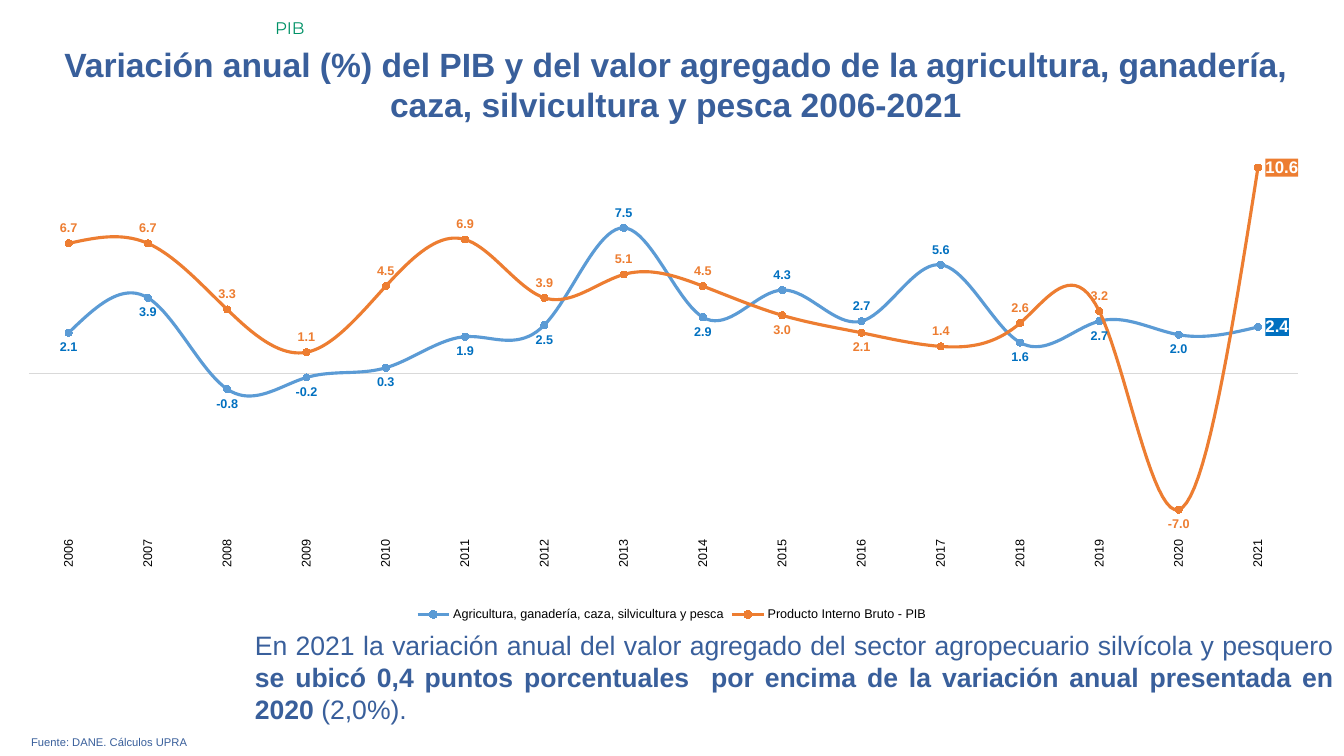
from lxml import etree
from pptx import Presentation
from pptx.chart.data import CategoryChartData
from pptx.dml.color import RGBColor
from pptx.enum.chart import (XL_CHART_TYPE, XL_LABEL_POSITION, XL_LEGEND_POSITION,
                             XL_MARKER_STYLE, XL_TICK_LABEL_POSITION, XL_TICK_MARK)
from pptx.enum.text import MSO_ANCHOR, PP_ALIGN
from pptx.oxml import parse_xml
from pptx.oxml.ns import nsdecls, qn
from pptx.util import Pt

ABOVE, BELOW, RIGHT = XL_LABEL_POSITION.ABOVE, XL_LABEL_POSITION.BELOW, XL_LABEL_POSITION.RIGHT
LEFT_ALIGN, CENTER, JUSTIFY = PP_ALIGN.LEFT, PP_ALIGN.CENTER, PP_ALIGN.JUSTIFY
COLORS = {"navy": "395F9B", "green": "009267", "blue": "5B9BD5", "deep blue": "0070C0",
          "orange": "ED7D31", "grey": "D9D9D9", "black": "000000", "white": "FFFFFF"}
NUMBER_FORMAT = "#,##0.0"


def set_font(font, size, color, bold=False, name="Arial"):
    values = {"size": Pt(size), "bold": bold, "name": name}
    for key, value in values.items():
        setattr(font, key, value)
    font.color.rgb = RGBColor.from_string(COLORS[color])


def fill_text(box, place, align, size, color, spans, name="Arial"):
    """Place a text shape and write one paragraph of (text, bold) spans."""
    box.left, box.top, box.width, box.height = [Pt(length) for length in place]
    frame = box.text_frame
    frame.word_wrap = True
    frame.vertical_anchor = MSO_ANCHOR.TOP
    para = frame.paragraphs[0]
    para.alignment = align
    for text, bold in spans:
        span = para.add_run()
        span.text = text
        set_font(span.font, size, color, bold, name)


deck = Presentation()
deck.slide_width, deck.slide_height = Pt(960), Pt(540)
page = deck.slides.add_slide(deck.slide_layouts[5])

# Texts
fill_text(page.shapes.title, (32.4, 27.4, 900.7, 65.5), CENTER, 24, "navy", [
    ("Variación anual (%) del PIB y del valor agregado de la agricultura, ganadería, "
     "caza, silvicultura y pesca 2006-2021", True)])

text_boxes = [
    ((15.1, 522, 929.5, 17), JUSTIFY, 8, "navy", [("Fuente: DANE. Cálculos UPRA", False)], "Arial"),
    ((189.4, 9.4, 770.4, 21.6), LEFT_ALIGN, 12, "green", [("PIB", False)], "Montserrat"),
    ((175, 445.7, 784.8, 76.3), JUSTIFY, 19, "navy", [
        ("En 2021 la variación anual del valor agregado del sector agropecuario silvícola "
         "y pesquero ", False),
        ("se ubicó 0,4 puntos porcentuales  por encima de la variación anual presentada "
         "en 2020 ", True),
        ("(2,0%).", False)], "Arial"),
]
for place, align, size, color, spans, name in text_boxes:
    box = page.shapes.add_textbox(0, 0, 0, 0)
    fill_text(box, place, align, size, color, spans, name)

# Chart
data = CategoryChartData(number_format=NUMBER_FORMAT)
data.categories = [str(year) for year in range(2006, 2022)]
data.add_series("Agricultura, ganadería, caza, silvicultura y pesca",
                [2.1, 3.9, -0.8, -0.2, 0.3, 1.9, 2.5, 7.5,
                 2.9, 4.3, 2.7, 5.6, 1.6, 2.7, 2.0, 2.4])
data.add_series("Producto Interno Bruto - PIB",
                [6.7, 6.7, 3.3, 1.1, 4.5, 6.9, 3.9, 5.1,
                 4.5, 3.0, 2.1, 1.4, 2.6, 3.2, -7.0, 10.6])
chart = page.shapes.add_chart(XL_CHART_TYPE.LINE_MARKERS, Pt(15.1), Pt(92.9),
                              Pt(929.5), Pt(354.2), data).chart
set_font(chart.font, 10, "black")
chart.has_title = False
chart.has_legend = True
chart.legend.position = XL_LEGEND_POSITION.BOTTOM
chart.legend.include_in_layout = False
set_font(chart.legend.font, 9, "black")

years = chart.category_axis
years.tick_label_position = XL_TICK_LABEL_POSITION.LOW
years.major_tick_mark = years.minor_tick_mark = XL_TICK_MARK.NONE
years.has_major_gridlines = False
years.format.line.color.rgb = RGBColor.from_string(COLORS["grey"])
years.format.line.width = Pt(0.75)
set_font(years.tick_labels.font, 9, "black")
years._element.find(qn("c:txPr")).find(qn("a:bodyPr")).set("rot", "-5400000")

percent = chart.value_axis
percent.minimum_scale, percent.maximum_scale = -8, 12
percent.has_major_gridlines = False
percent.tick_labels.number_format = NUMBER_FORMAT
percent.tick_labels.number_format_is_linked = False
percent.visible = False

# Inner plot area as fractions of the chart
plot_area = chart._chartSpace.find(qn("c:chart")).find(qn("c:plotArea"))
for old_layout in plot_area.findall(qn("c:layout")):
    plot_area.remove(old_layout)
layout = parse_xml(f"<c:layout {nsdecls('c')}><c:manualLayout/></c:layout>")
settings = {"layoutTarget": "inner", "xMode": "edge", "yMode": "edge",
            "x": 0.006, "y": 0.021, "w": 0.975, "h": 0.784}
for tag, value in settings.items():
    etree.SubElement(layout[0], qn(f"c:{tag}")).set("val", str(value))
plot_area.insert(0, layout)

# Line colour, label colour, usual label side, labels on another side
series_styles = [
    ("blue", "deep blue", BELOW, {7: ABOVE, 9: ABOVE, 10: ABOVE, 11: ABOVE, 15: RIGHT}),
    ("orange", "orange", ABOVE, {9: BELOW, 10: BELOW, 14: BELOW, 15: RIGHT}),
]
for series, (line_color, label_color, side, moved) in zip(chart.plots[0].series, series_styles):
    series.smooth = True
    series.format.line.color.rgb = RGBColor.from_string(COLORS[line_color])
    series.format.line.width = Pt(2.25)
    marker = series.marker
    marker.style, marker.size = XL_MARKER_STYLE.CIRCLE, 5
    marker.format.fill.solid()
    marker.format.fill.fore_color.rgb = RGBColor.from_string(COLORS[label_color])
    marker.format.line.color.rgb = RGBColor.from_string(COLORS[line_color])
    labels = series.data_labels
    labels.show_value = True
    labels.number_format, labels.number_format_is_linked = NUMBER_FORMAT, False
    labels.position = side
    set_font(labels.font, 9, label_color, bold=True)
    for index, point_side in moved.items():
        label = series.points[index].data_label
        last = point_side == RIGHT
        set_font(label.font, 12 if last else 9, "white" if last else label_color, bold=True)
        label.position = point_side
    # The last year stands on a filled box
    last_label = series._element.find(qn("c:dLbls")).findall(qn("c:dLbl"))[-1]
    box_fill = parse_xml(f'<c:spPr {nsdecls("c", "a")}><a:solidFill>'
                         f'<a:srgbClr val="{COLORS[label_color]}"/></a:solidFill></c:spPr>')
    for old_fill in last_label.findall(qn("c:spPr")):
        last_label.remove(old_fill)
    last_label.find(qn("c:txPr")).addprevious(box_fill)

deck.save("out.pptx")
